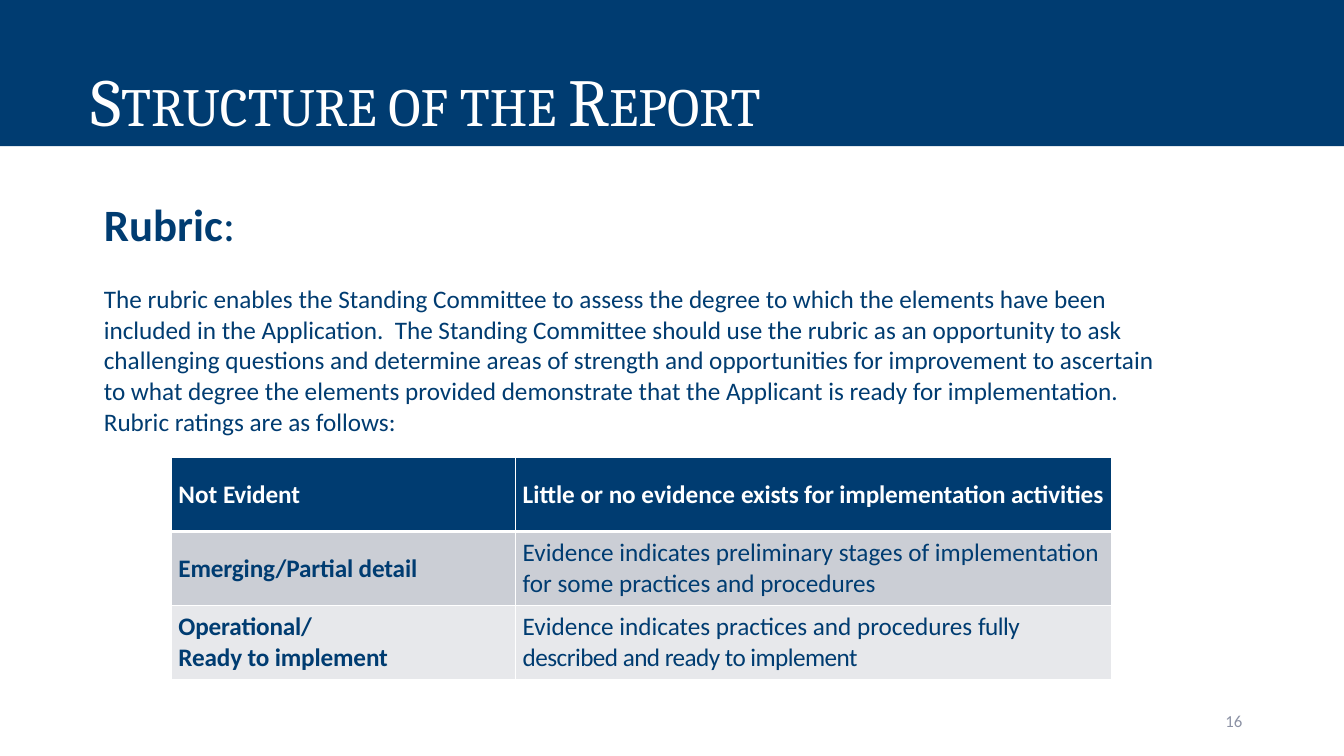
from lxml import etree
from pptx import Presentation
from pptx.dml.color import RGBColor
from pptx.enum.text import MSO_ANCHOR, MSO_AUTO_SIZE, PP_ALIGN
from pptx.oxml.ns import qn
from pptx.util import Inches, Pt

NAVY = RGBColor(0x00, 0x3C, 0x71)
WHITE = RGBColor(0xFF, 0xFF, 0xFF)
GREY = RGBColor(0x8C, 0x92, 0xA5)
BAND_DARK = RGBColor(0xCB, 0xCE, 0xD5)
BAND_LIGHT = RGBColor(0xE7, 0xE8, 0xEB)
MIDDLE, BOTTOM = MSO_ANCHOR.MIDDLE, MSO_ANCHOR.BOTTOM
LEFT, RIGHT = PP_ALIGN.LEFT, PP_ALIGN.RIGHT
NO_FIT = MSO_AUTO_SIZE.NONE

SLIDE_W, SLIDE_H = 13.33, 7.5

INTRO = (
    "The rubric enables the Standing Committee to assess the degree to which the "
    "elements have been included in the Application.  The Standing Committee should "
    "use the rubric as an opportunity to ask challenging questions and determine areas "
    "of strength and opportunities for improvement to ascertain to what degree the "
    "elements provided demonstrate that the Applicant is ready for implementation. "
    "Rubric ratings are as follows:"
)

# Each cell is a list of paragraphs, each paragraph a list of (text, spacing in points)
RATINGS = [
    ([[("Not ", 0), ("Evident", -0.1)]],
     [[("Little or no evidence ", 0),
       ("exists for implementation activities", -0.1)]]),
    ([[("Emerging/Partial detail", -0.1)]],
     [[("Evidence indicates preliminary stages of implementation "
        "for some practices and procedures", 0)]]),
    ([[("Operational/", -0.1)], [("Ready to implement", -0.1)]],
     [[("Evidence indicates practices and procedures", 0),
       (" fully described and ready to implement", -0.4)]]),
]
ROW_FILLS = [NAVY, BAND_DARK, BAND_LIGHT]
COLUMN_SHARES = [0.366, 0.634]


def add_run(p, text, size, color, bold=False, font="Calibri", spacing=0):
    r = p.add_run()
    r.text = text
    r.font.size, r.font.bold, r.font.name = Pt(size), bold, font
    r.font.color.rgb = color
    if spacing:
        r._r.get_or_add_rPr().set("spc", str(round(spacing * 100)))
    return r


def set_margins(target, left, top, right, bottom):
    target.margin_left, target.margin_top = Inches(left), Inches(top)
    target.margin_right, target.margin_bottom = Inches(right), Inches(bottom)


def set_borders(cell, bottom=1, top=1):
    tcPr = cell._tc.get_or_add_tcPr()
    widths = {"lnL": 1, "lnR": 1, "lnT": top, "lnB": bottom}
    for i, (tag, width) in enumerate(widths.items()):
        ln = etree.Element(qn("a:" + tag), w=str(Pt(width)))
        fill = etree.SubElement(ln, qn("a:solidFill"))
        etree.SubElement(fill, qn("a:srgbClr"), val=str(WHITE))
        tcPr.insert(i, ln)


def add_grid(s, box, rows, shares, row_h):
    x, y, w, h = box
    frame = s.shapes.add_table(rows, len(shares), Inches(x), Inches(y),
                               Inches(w), Inches(h))
    table = frame.table
    table.first_row = table.horz_banding = False
    for column, share in zip(table.columns, shares):
        column.width = Inches(w * share)
    for row in table.rows:
        row.height = Inches(row_h)
    return table


def add_title(s, box, text):
    title = s.shapes.title
    title.left, title.top, title.width, title.height = map(Inches, box)
    title.fill.solid()
    title.fill.fore_color.rgb = NAVY
    tf = title.text_frame
    tf.auto_size, tf.vertical_anchor, tf.word_wrap = NO_FIT, BOTTOM, True
    set_margins(tf, 0.9, 0.05, 0.1, 0.05)
    p = tf.paragraphs[0]
    p.alignment, p.line_spacing = LEFT, 0.9
    r = add_run(p, text, 48, WHITE, font="Cambria")
    r._r.get_or_add_rPr().set("cap", "small")


def add_intro(s, box):
    cell = add_grid(s, box, 1, [1], 2.45).cell(0, 0)
    cell.fill.background()
    cell.vertical_anchor = MIDDLE
    set_margins(cell, 0.01, 0.01, 0.01, 0)
    set_borders(cell)
    tf = cell.text_frame
    heading = tf.paragraphs[0]
    heading.space_after = Pt(22)
    add_run(heading, "Rubric", 32, NAVY, bold=True)
    add_run(heading, ":", 32, NAVY)
    add_run(tf.add_paragraph(), INTRO, 18, NAVY)


def add_ratings(s, box):
    table = add_grid(s, box, len(RATINGS), COLUMN_SHARES, box[3] / len(RATINGS))
    for i, row in enumerate(RATINGS):
        for j, paragraphs in enumerate(row):
            cell = table.cell(i, j)
            cell.fill.solid()
            cell.fill.fore_color.rgb = ROW_FILLS[i]
            cell.vertical_anchor = MIDDLE
            set_margins(cell, 0.07, 0, 0.07, 0)
            set_borders(cell, bottom=3 if i == 0 else 1, top=3 if i == 1 else 1)
            tf = cell.text_frame
            for k, runs in enumerate(paragraphs):
                p = tf.add_paragraph() if k else tf.paragraphs[0]
                for text, spacing in runs:
                    add_run(p, text, 18, WHITE if i == 0 else NAVY,
                            bold=i == 0 or j == 0, spacing=spacing)


def add_page_number(s, box, number):
    tf = s.shapes.add_textbox(*map(Inches, box)).text_frame
    tf.word_wrap, tf.vertical_anchor = True, MIDDLE
    p = tf.paragraphs[0]
    p.alignment = RIGHT
    add_run(p, number, 12, GREY)


def main():
    prs = Presentation()
    prs.slide_width, prs.slide_height = Inches(SLIDE_W), Inches(SLIDE_H)
    s = prs.slides.add_slide(prs.slide_layouts[5])
    add_title(s, (0, 0, SLIDE_W, 1.45), "Structure of the Report")
    add_page_number(s, (9.42, 6.95, 3, 0.4), "16")
    add_intro(s, (1.02, 1.93, 10.7, 2.45))
    add_ratings(s, (1.7, 4.54, 9.33, 2.2))
    prs.save("out.pptx")


if __name__ == "__main__":
    main()
